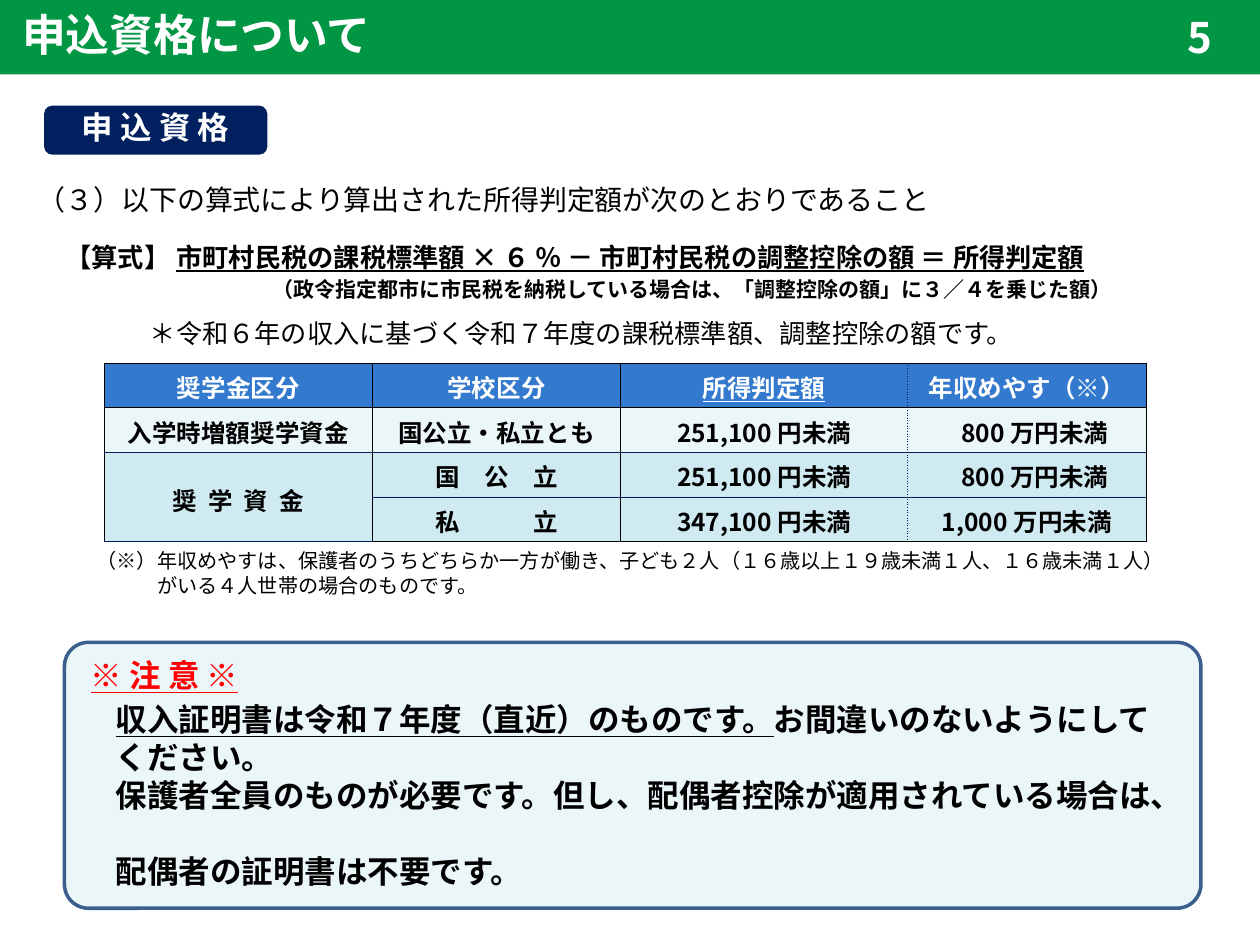
from lxml import etree
from pptx import Presentation
from pptx import util as u
from pptx.dml.color import RGBColor
from pptx.enum import shapes, text
from pptx.oxml.ns import qn

Cm, Pt = u.Cm, u.Pt
FONT = "Noto Sans CJK JP"
GREEN = RGBColor(0x00, 0x96, 0x44)
NAVY = RGBColor(0x00, 0x20, 0x60)
BLUE = RGBColor(0x33, 0x79, 0xCD)
PALE = RGBColor(0xEB, 0xF6, 0xF9)
AQUA = RGBColor(0xCF, 0xEA, 0xF1)
EDGE = RGBColor(0x3A, 0x5F, 0x8C)
RED = RGBColor(0xFF, 0x00, 0x00)
BLACK = RGBColor(0, 0, 0)
WHITE = RGBColor(0xFF, 0xFF, 0xFF)


def write(par, parts, size, color=BLACK, bold=False, align=text.PP_ALIGN.LEFT,
          line=None, gap=0, indent=0):
    """Fill a paragraph; parts are (wording, underlined) pairs."""
    par.alignment = align
    par.space_before = Pt(gap)
    if line:
        par.line_spacing = Pt(line)
    if indent:
        par._p.get_or_add_pPr().set("marL", str(Cm(indent)))
    for words, under in parts:
        run = par.add_run()
        run.text = words
        font = run.font
        font.name, font.size, font.bold = FONT, Pt(size), bold
        font.underline = under
        font.color.rgb = color
        etree.SubElement(run._r.get_or_add_rPr(), qn("a:ea"), typeface=FONT)


def panel(kind, left, top, width, height, fill):
    """Add a plain filled shape with its text centred vertically."""
    shape = slide.shapes.add_shape(kind, Cm(left), Cm(top), Cm(width), Cm(height))
    shape.shadow.inherit = False
    shape.fill.solid()
    shape.fill.fore_color.rgb = fill
    shape.line.fill.background()
    shape.text_frame.word_wrap = True
    shape.text_frame.vertical_anchor = text.MSO_ANCHOR.MIDDLE
    return shape


deck = Presentation()
deck.slide_width, deck.slide_height = Cm(25.4), Cm(19.05)
slide = deck.slides.add_slide(deck.slide_layouts[5])
CENTER = text.PP_ALIGN.CENTER
RECT = shapes.MSO_SHAPE.RECTANGLE
ROUND = shapes.MSO_SHAPE.ROUNDED_RECTANGLE

# Title bar
title = slide.shapes.title
title.left, title.top, title.width, title.height = Cm(0), Cm(0), Cm(25.4), Cm(1.5)
title.fill.solid()
title.fill.fore_color.rgb = GREEN
frame = title.text_frame
frame.auto_size = text.MSO_AUTO_SIZE.NONE
frame.vertical_anchor = text.MSO_ANCHOR.MIDDLE
frame.margin_left, frame.margin_top, frame.margin_bottom = Cm(0.45), 0, Cm(0.13)
write(frame.paragraphs[0], [("申込資格について", False)], 25, WHITE, True)

# Page number
page = panel(RECT, 23.09, 0.1, 2.21, 1.27, GREEN)
write(page.text_frame.paragraphs[0], [("5", False)], 24, WHITE, True, CENTER)

# Section label
label = panel(ROUND, 0.89, 2.13, 4.5, 0.99, NAVY)
label.text_frame.margin_top = 0
write(label.text_frame.paragraphs[0], [("申 込 資 格", False)], 18, WHITE, True, CENTER)

# Condition and formula: parts, size, bold, line, gap, indent
rules = [
    ([("（３）以下の算式により算出された所得判定額が次のとおりであること", False)],
     16, False, 20, 0, 0),
    ([("【算式】 ", False),
      ("市町村民税の課税標準額 × ６ ％ － 市町村民税の調整控除の額 ＝ 所得判定額", True)],
     15, True, 18, 14, 0.56),
    ([("（政令指定都市に市民税を納税している場合は、「調整控除の額」に３／４を乗じた額）", False)],
     12, True, 15, 2, 4.74),
    ([("＊令和６年の収入に基づく令和７年度の課税標準額、調整控除の額です。", False)],
     15, False, 18, 8.6, 2.26),
]
body = slide.shapes.add_textbox(Cm(0.51), Cm(3.53), Cm(24.2), Cm(3.7)).text_frame
body.word_wrap = True
for i, (parts, size, bold, line, gap, indent) in enumerate(rules):
    par = body.add_paragraph() if i else body.paragraphs[0]
    write(par, parts, size, bold=bold, line=line, gap=gap, indent=indent)

# Income table
rows = [
    ["奨学金区分", "学校区分", "所得判定額", "年収めやす（※）"],
    ["入学時増額奨学資金", "国公立・私立とも", "251,100 円未満", "800 万円未満"],
    ["奨  学  資  金", "国　公　立", "251,100 円未満", "800 万円未満"],
    ["", "私　　　立", "347,100 円未満", "1,000 万円未満"],
]
fills = [BLUE, PALE, AQUA, AQUA]
thin, dots = (BLACK, 0.5, "solid"), (NAVY, 0.75, "sysDot")
levels = [thin, thin, (NAVY, 1, "solid"), (NAVY, 0.5, "solid"), thin]
walls = [thin, thin, thin, dots, thin]

table = slide.shapes.add_table(4, 4, Cm(2.1), Cm(7.32), Cm(21), Cm(3.6)).table
for col, width in zip(table.columns, [5.41, 5, 5.79, 4.8]):
    col.width = Cm(width)
for r, row in enumerate(rows):
    table.rows[r].height = Cm(0.9)
    for c, words in enumerate(row):
        cell = table.cell(r, c)
        props = cell._tc.get_or_add_tcPr()
        sides = [("L", walls[c]), ("R", walls[c + 1]),
                 ("T", levels[r]), ("B", levels[r + 1])]
        for side, (color, width, dash) in sides:
            edge = etree.SubElement(props, qn("a:ln" + side), w=str(Pt(width)))
            paint = etree.SubElement(edge, qn("a:solidFill"))
            etree.SubElement(paint, qn("a:srgbClr"), val=str(color))
            etree.SubElement(edge, qn("a:prstDash"), val=dash)
        cell.fill.solid()
        cell.fill.fore_color.rgb = fills[r]
        cell.margin_top, cell.margin_bottom = Cm(0.2), 0
        if words.startswith("800"):
            cell.margin_left = Cm(0.58)
        if words:
            write(cell.text_frame.paragraphs[0], [(words, (r, c) == (0, 2))], 14,
                  BLACK if r else WHITE, True, CENTER, 18)
table.cell(2, 0).merge(table.cell(3, 0))
table.cell(2, 0).vertical_anchor = text.MSO_ANCHOR.MIDDLE

# Footnote with a hanging second line
notes = [
    ("（※）年収めやすは、保護者のうちどちらか一方が働き、"
     "子ども２人（１６歳以上１９歳未満１人、１６歳未満１人）", 0),
    ("がいる４人世帯の場合のものです。", 1.22),
]
foot = slide.shapes.add_textbox(Cm(1.7), Cm(10.92), Cm(22.5), Cm(1.24)).text_frame
foot.word_wrap = True
for i, (words, indent) in enumerate(notes):
    par = foot.add_paragraph() if i else foot.paragraphs[0]
    write(par, [(words, False)], 11.5, line=14.3, indent=indent)

# Caution box: parts, colour, gap, indent
cautions = [
    ([("※ 注 意 ※", True)], RED, 0, 0.14),
    ([("収入証明書は令和７年度（直近）のものです。", True),
      ("お間違いのないようにして", False)], BLACK, 3.6, 0.64),
    ([("ください。", False)], BLACK, 0, 0.64),
    ([("保護者全員のものが必要です。但し、配偶者控除が適用されている場合は、", False)],
     BLACK, 0, 0.64),
    ([("配偶者の証明書は不要です。", False)], BLACK, 21.6, 0.64),
]
box = panel(ROUND, 1.3, 12.95, 22.91, 5.36, PALE)
box.adjustments[0] = 0.09
box.line.color.rgb = EDGE
box.line.width = Pt(2)
frame = box.text_frame
frame.margin_right, frame.margin_top, frame.margin_bottom = 0, Cm(0.2), Cm(0.3)
for i, (parts, color, gap, indent) in enumerate(cautions):
    par = frame.add_paragraph() if i else frame.paragraphs[0]
    write(par, parts, 18, color, True, line=21.6, gap=gap, indent=indent)

deck.save("out.pptx")
